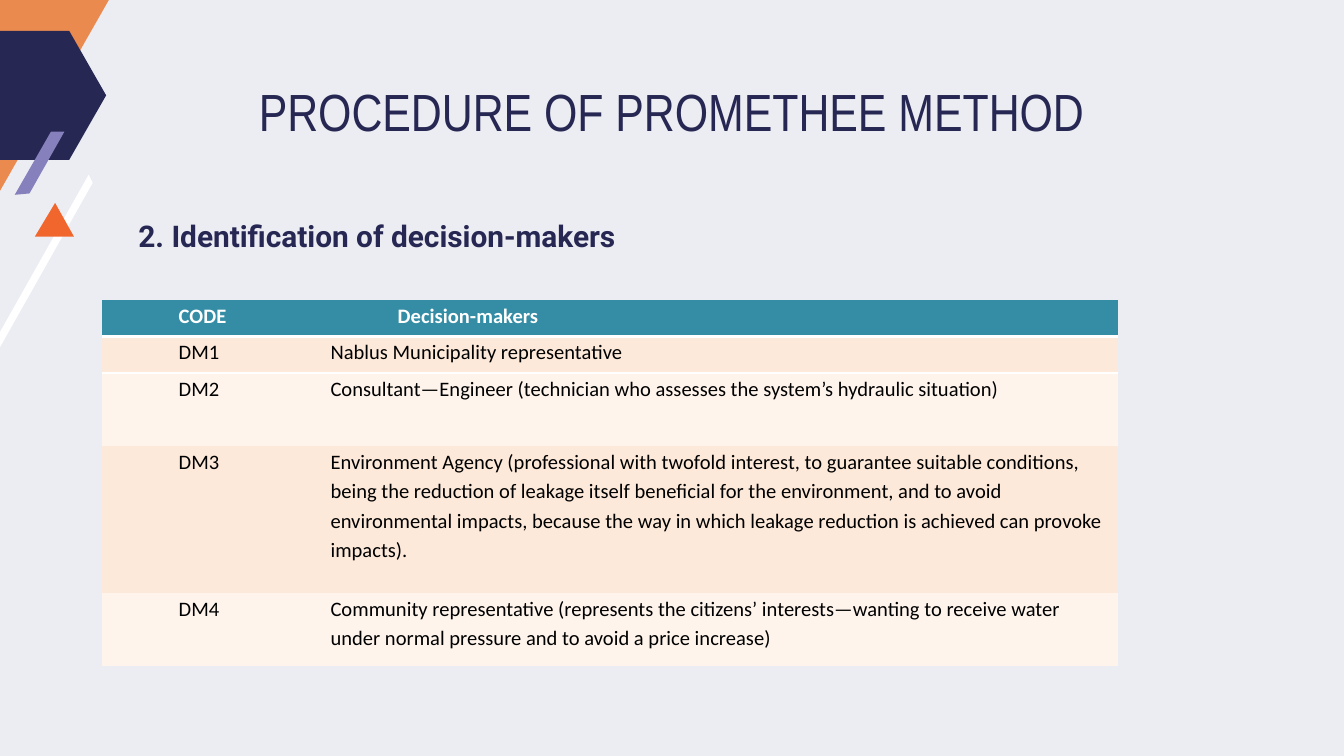
from typing import NamedTuple
from lxml.etree import SubElement as Sub
from pptx import Presentation
from pptx.dml.color import RGBColor as Color
from pptx.dml.fill import FillFormat as Fill
from pptx.enum.shapes import MSO_SHAPE as Kind
from pptx.enum.text import MSO_ANCHOR as Anchor, MSO_AUTO_SIZE as Fit, PP_ALIGN as Align
from pptx.oxml import parse_xml
from pptx.oxml.ns import nsdecls, qn
from pptx.shapes.base import BaseShape as Shape
from pptx.slide import Slide
from pptx.table import _Cell as Cell
from pptx.text.text import _Paragraph as Para
from pptx.util import Inches, Pt

NAVY, WHITE, BLACK = "272753", "FFFFFF", "000000"
TEAL, PEACH, CREAM = "348DA5", "FDE9D9", "FEF4EC"
NO_STYLE = "{2D5ABB26-0587-4C30-8999-92F81FD0307C}"


class Font(NamedTuple):
    name: str
    size: float
    color: str
    bold: bool = False


class Box(NamedTuple):
    left: float
    top: float
    width: float
    height: float


class Poly(NamedTuple):
    color: str
    points: list[tuple[float, float]]


class Row(NamedTuple):
    code: str
    maker: str
    share: int


BACK = [
    Poly("EA8A4F", [(0, 0), (0.81, 0), (0, 1.42)]),
    Poly(WHITE, [(-0.09, 2.63), (0.66, 1.3), (0.69, 1.36), (-0.06, 2.69)]),
    Poly("F1662D", [(0.26, 1.76), (0.55, 1.76), (0.41, 1.51)]),
]
SLASH = Poly("8680BC", [(0.38, 0.98), (0.11, 1.45), (0.22, 1.44), (0.48, 0.98)])

ROWS = [
    Row("CODE", "Decision-makers", 1),
    Row("DM1", "Nablus Municipality representative", 1),
    Row("DM2", "Consultant—Engineer (technician who assesses the system’s "
        "hydraulic situation)", 2),
    Row("DM3", "Environment Agency (professional with twofold interest, to "
        "guarantee suitable conditions, being the reduction of leakage itself "
        "beneficial for the environment, and to avoid environmental impacts, "
        "because the way in which leakage reduction is achieved can provoke "
        "impacts).", 4),
    Row("DM4", "Community representative (represents the citizens’ "
        "interests—wanting to receive water under normal pressure and to "
        "avoid a price increase)", 2),
]


def paint(fill: Fill, color: str) -> None:
    fill.solid()
    fill.fore_color.rgb = Color.from_string(color)


def finish(shape: Shape, color: str) -> None:
    paint(shape.fill, color)
    shape.line.fill.background()
    shape.shadow.inherit = False


def draw_poly(slide: Slide, poly: Poly) -> None:
    first, *rest = [(Inches(x), Inches(y)) for x, y in poly.points]
    pen = slide.shapes.build_freeform(*first)
    pen.add_line_segments(rest, close=True)
    finish(pen.convert_to_shape(), poly.color)


def draw_hex(slide: Slide, box: Box) -> None:
    shape = slide.shapes.add_shape(Kind.HEXAGON, *map(Inches, box))
    shape.adjustments[0] = 0.286
    shape.adjustments[1] = 1.155
    finish(shape, NAVY)


def add_run(para: Para, text: str, font: Font) -> None:
    run = para.add_run()
    run.text = text
    run.font.name = font.name
    run.font.size = Pt(font.size)
    run.font.bold = font.bold
    run.font.color.rgb = Color.from_string(font.color)


def indent(para: Para, left: float) -> None:
    props = para._p.get_or_add_pPr()
    props.set("marL", str(Inches(left)))
    props.set("indent", "0")


def fill_holder(shape: Shape, box: Box, text: str, font: Font) -> Para:
    shape.left, shape.top, shape.width, shape.height = map(Inches, box)
    frame = shape.text_frame
    frame.word_wrap = True
    frame.auto_size = Fit.NONE
    frame.vertical_anchor = Anchor.TOP
    frame.margin_left = frame.margin_right = Inches(0.1)
    frame.margin_top = frame.margin_bottom = Inches(0.1)
    para = frame.paragraphs[0]
    para.space_before = Pt(0)
    add_run(para, text, font)
    return para


def rule(cell: Cell, side: str) -> None:
    line = parse_xml(
        f'<a:{side} {nsdecls("a")} w="{Pt(1.5)}"><a:solidFill>'
        f'<a:srgbClr val="{WHITE}"/></a:solidFill></a:{side}>')
    cell._tc.get_or_add_tcPr().insert(0, line)


def fill_cell(cell: Cell, text: str, left: float, font: Font, color: str) -> None:
    cell.margin_left = cell.margin_right = Inches(0.07)
    cell.margin_top = cell.margin_bottom = 0
    paint(cell.fill, color)
    para = cell.text_frame.paragraphs[0]
    indent(para, left)
    para.line_spacing = 1.15
    add_run(para, text, font)


def draw_table(slide: Slide, box: Box, widths: list[float]) -> None:
    frame = slide.shapes.add_table(len(ROWS), len(widths), *map(Inches, box))
    table = frame.table
    table._tbl.tblPr.find(qn("a:tableStyleId")).text = NO_STYLE
    for col, width in zip(table.columns, widths):
        col.width = Inches(width)
    unit = box.height / sum(row.share for row in ROWS)
    for i, row in enumerate(ROWS):
        table.rows[i].height = Inches(unit * row.share)
        head = i == 0
        font = Font("Calibri", 11, WHITE if head else BLACK, head)
        color = TEAL if head else PEACH if i % 2 else CREAM
        fill_cell(table.cell(i, 0), row.code, 0.5, font, color)
        fill_cell(table.cell(i, 1), row.maker, 0.5 if head else 0, font, color)
    for j in range(len(widths)):
        rule(table.cell(0, j), "lnB")
        rule(table.cell(1, j), "lnT")


def main() -> None:
    deck = Presentation()
    deck.slide_width = Inches(10)
    deck.slide_height = deck.slide_width * 9 // 16
    slide = deck.slides.add_slide(deck.slide_layouts[1])
    paint(slide.background.fill, "ECEDF3")
    for poly in BACK:
        draw_poly(slide, poly)
    draw_hex(slide, Box(-0.29, 0.23, 1.08, 0.96))
    draw_poly(slide, SLASH)
    title = fill_holder(slide.shapes.title, Box(1.27, 0.49, 7.45, 0.63),
                        "PROCEDURE OF PROMETHEE METHOD",
                        Font("Arial Narrow", 28, NAVY))
    title.alignment = Align.CENTER
    body = fill_holder(slide.placeholders[1], Box(0.76, 1.48, 8.66, 0.39),
                       "2. Identification of decision-makers",
                       Font("Roboto", 16, NAVY, True))
    indent(body, 0.17)
    body.line_spacing = 1.15
    Sub(body._p.get_or_add_pPr(), qn("a:buNone"))
    draw_table(slide, Box(0.76, 2.23, 7.56, 2.73), [1.63, 5.93])
    deck.save("out.pptx")


if __name__ == "__main__":
    main()
